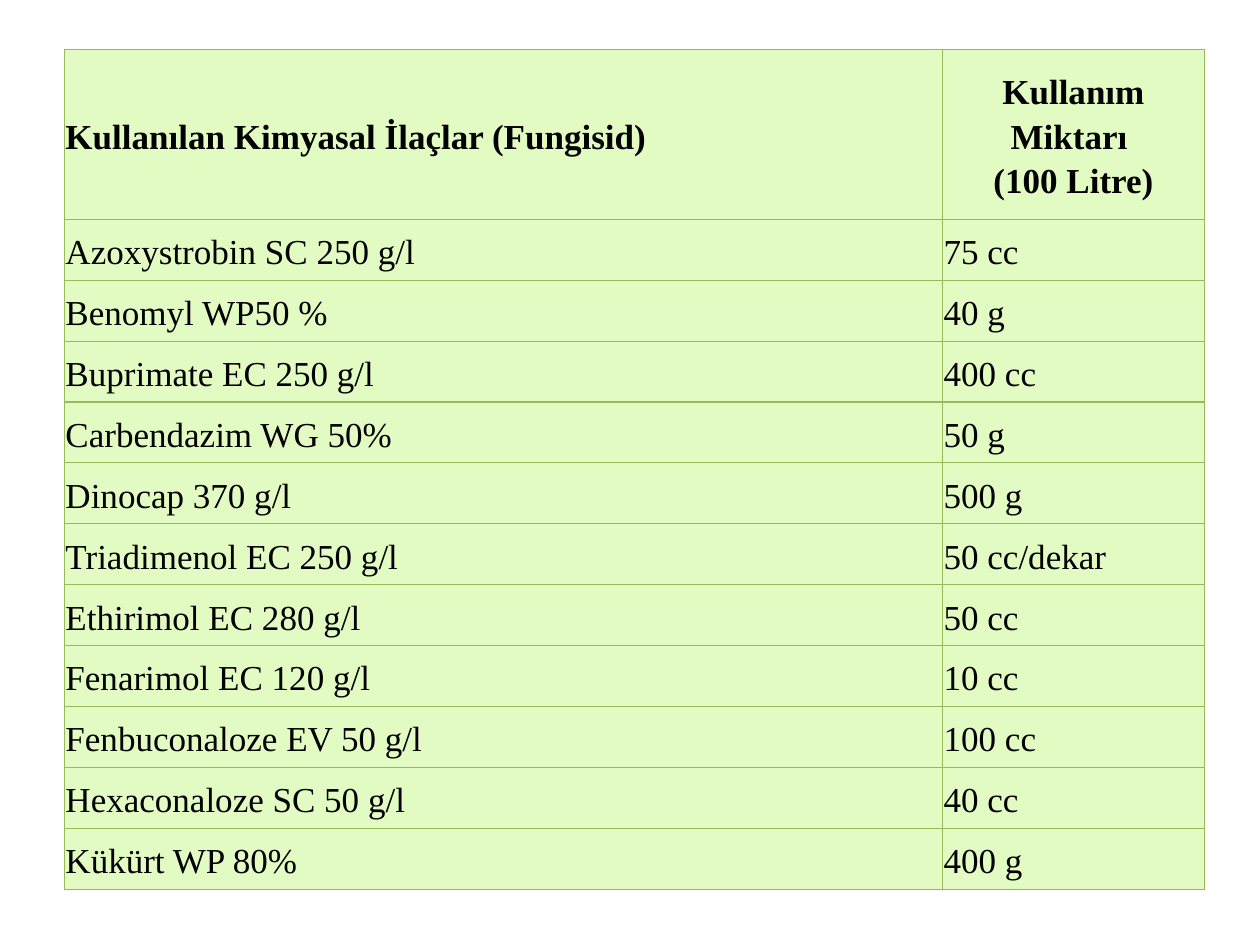
from lxml.etree import SubElement
from pptx import Presentation
from pptx.dml.color import RGBColor
from pptx.enum.text import MSO_ANCHOR, PP_ALIGN
from pptx.oxml.ns import qn
from pptx.util import Inches, Pt

HEADER = ("Kullanılan Kimyasal İlaçlar (Fungisid)", "Kullanım Miktarı \n(100 Litre)")
FUNGICIDES = [
    ("Azoxystrobin SC 250 g/l", "75 cc"),
    ("Benomyl WP50 %", "40 g"),
    ("Buprimate EC 250 g/l", "400 cc"),
    ("Carbendazim WG 50%", "50 g"),
    ("Dinocap 370 g/l", "500 g"),
    ("Triadimenol EC 250 g/l", "50 cc/dekar"),
    ("Ethirimol EC 280 g/l", "50 cc"),
    ("Fenarimol EC 120 g/l", "10 cc"),
    ("Fenbuconaloze EV 50 g/l", "100 cc"),
    ("Hexaconaloze SC 50 g/l", "40 cc"),
    ("Kükürt WP 80%", "400 g"),
]
COLORS = {"fill": "E2FBC2", "border": "98B955", "text": "000000"}
FONT = "Times New Roman"
LEFT, TOP = 0.51, 0.39
COLUMN_WIDTHS = (6.97, 2.08)
HEADER_HEIGHT, TOTAL_HEIGHT = 1.35, 6.67


def add_borders(cell):
    properties = cell._tc.get_or_add_tcPr()
    for side in ("a:lnL", "a:lnR", "a:lnT", "a:lnB"):
        line = SubElement(properties, qn(side), w=str(Pt(0.75)))
        fill = SubElement(line, qn("a:solidFill"))
        SubElement(fill, qn("a:srgbClr"), val=COLORS["border"])


def fill_cell(cell, text, bold, alignment):
    cell.margin_left = cell.margin_right = Inches(0.01)
    cell.margin_top = cell.margin_bottom = Inches(0.01)
    cell.vertical_anchor = MSO_ANCHOR.MIDDLE
    add_borders(cell)
    cell.fill.solid()
    cell.fill.fore_color.rgb = RGBColor.from_string(COLORS["fill"])
    paragraph = cell.text_frame.paragraphs[0]
    paragraph.text = text
    paragraph.alignment = alignment
    paragraph.line_spacing = 1.15
    paragraph.space_after = Pt(10)
    for run in paragraph.runs:
        run.font.name = FONT
        run.font.size = Pt(20)
        run.font.bold = bold
        run.font.color.rgb = RGBColor.from_string(COLORS["text"])


def main():
    presentation = Presentation()
    presentation.slide_width = Inches(10)
    presentation.slide_height = Inches(7.5)
    slide = presentation.slides.add_slide(presentation.slide_layouts[6])

    rows = [HEADER] + FUNGICIDES
    table = slide.shapes.add_table(
        len(rows), len(COLUMN_WIDTHS), Inches(LEFT), Inches(TOP),
        Inches(sum(COLUMN_WIDTHS)), Inches(TOTAL_HEIGHT)).table
    table.first_row = table.horz_banding = False
    for column, width in zip(table.columns, COLUMN_WIDTHS):
        column.width = Inches(width)

    body_height = (TOTAL_HEIGHT - HEADER_HEIGHT) / len(FUNGICIDES)
    for row_index, texts in enumerate(rows):
        is_header = row_index == 0
        table.rows[row_index].height = Inches(HEADER_HEIGHT if is_header else body_height)
        for column_index, text in enumerate(texts):
            centered = is_header and column_index == 1
            fill_cell(table.cell(row_index, column_index), text, is_header,
                      PP_ALIGN.CENTER if centered else PP_ALIGN.LEFT)

    presentation.save("out.pptx")


if __name__ == "__main__":
    main()
